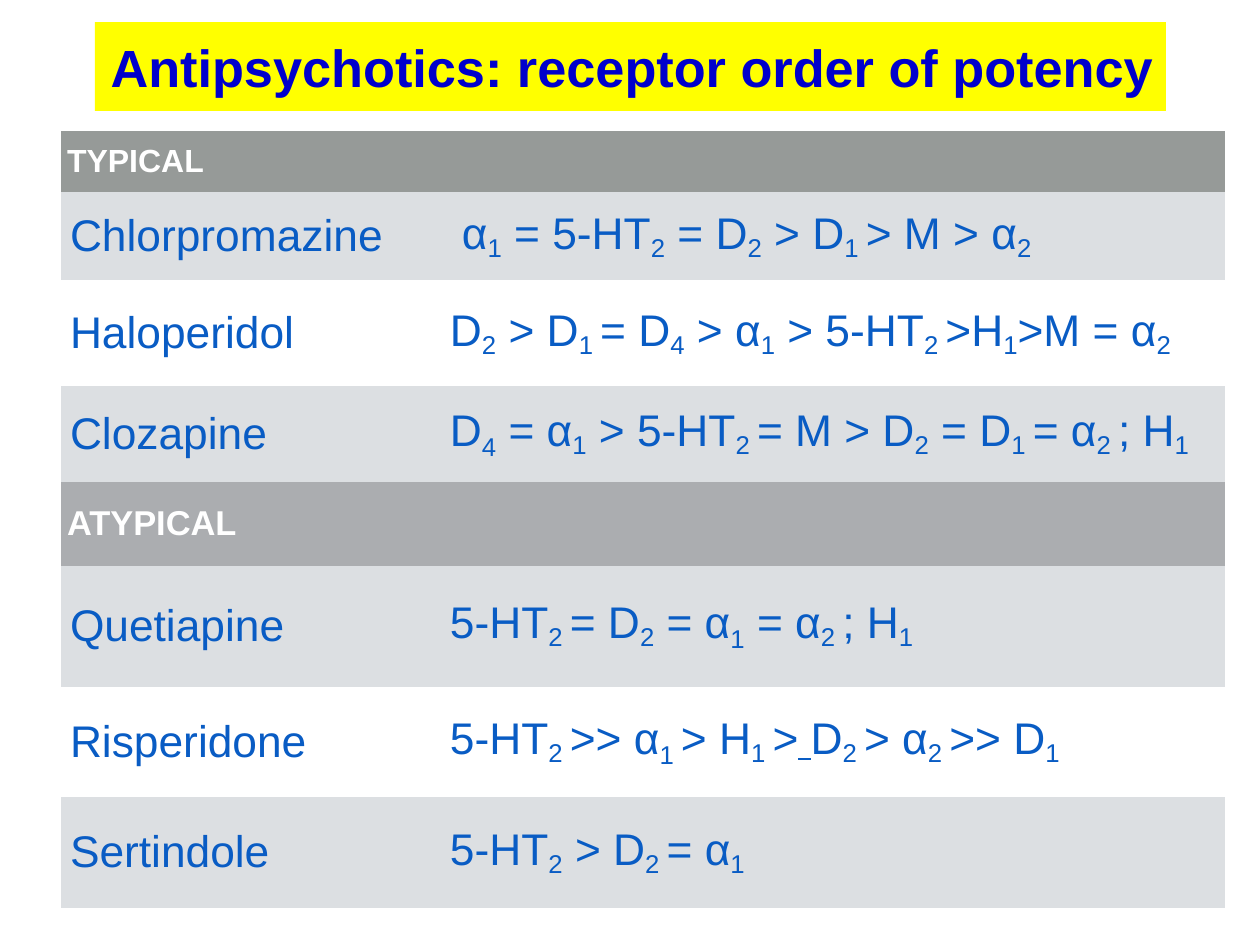
from dataclasses import dataclass

from pptx import Presentation
from pptx.dml.color import RGBColor
from pptx.enum.shapes import MSO_SHAPE as Shape
from pptx.enum.text import MSO_ANCHOR as Anchor, PP_ALIGN as Align
from pptx.oxml.ns import qn
from pptx.slide import Slide
from pptx.table import Table, _Cell as Cell
from pptx.text.text import _Paragraph as Paragraph
from pptx.util import Pt

PX = 10320
PAGE_WIDTH, PAGE_HEIGHT = 1260, 945
FONT = "Arial"
PLAIN_TABLE = "{2D5ABB26-0587-4C30-8999-92F81FD0307C}"
COLUMN_WIDTHS = (380, 784)
TABLE_LEFT, TABLE_TOP = 61, 131
MARGIN = 6

YELLOW = RGBColor(0xFF, 0xFF, 0x00)
NAVY = RGBColor(0x00, 0x00, 0xCC)
WHITE = RGBColor(0xFF, 0xFF, 0xFF)
BLUE = RGBColor(0x09, 0x5C, 0xC4)
DARK_GREY = RGBColor(0x96, 0x9A, 0x98)
MID_GREY = RGBColor(0xAB, 0xAD, 0xB0)
PALE_GREY = RGBColor(0xDC, 0xDF, 0xE2)

SPAN_STYLES = {
    "_": ("baseline", "-18000"),
    "~": ("baseline", "-23000"),
    "^": ("u", "sng"),
}


@dataclass(frozen=True)
class Group:
    name: str
    height: int
    size: float
    fill: RGBColor


@dataclass(frozen=True)
class Drug:
    name: str
    height: int
    fill: RGBColor
    potency: str
    indent: int = -34


ROWS: tuple[Group | Drug, ...] = (
    Group("TYPICAL", 61, 26, DARK_GREY),
    Drug("Chlorpromazine", 88, PALE_GREY,
         "α|_1| = 5-HT|_2| = D|_2| > D|_1 |> M > α|_2", indent=-22),
    Drug("Haloperidol", 106, WHITE,
         "D|_2| > D|_1 |= D|_4| > α|_1| > 5-HT|_2 |>H|_1|>M = α|_2"),
    Drug("Clozapine", 96, PALE_GREY,
         "D|~4| = α|_1| > 5-HT|_2 |= M > D|_2| = D|_1 |= α|_2 |; H|_1"),
    Group("ATYPICAL", 84, 28, MID_GREY),
    Drug("Quetiapine", 121, PALE_GREY,
         "5-HT|_2 |= D|_2| = α|~1| = α|_2 |; H|_1"),
    Drug("Risperidone", 110, WHITE,
         "5-HT|_2 |>> α|~1 |> H|_1 |>|^ |D|_2 |> α|_2 |>> D|_1"),
    Drug("Sertindole", 111, PALE_GREY,
         "5-HT|_2| > D|_2 |= α|_1"),
)


def add_spans(para: Paragraph, text: str, size: float, color: RGBColor,
              bold: bool = False) -> None:
    for part in text.split("|"):
        style = SPAN_STYLES.get(part[0])
        span = para.add_run()
        span.text = part[1:] if style else part
        span.font.name = FONT
        span.font.size = Pt(size)
        span.font.bold = bold
        span.font.color.rgb = color
        if style:
            span.font._element.set(*style)


def set_indent(para: Paragraph, left: int, first: int) -> None:
    properties = para._p.get_or_add_pPr()
    properties.set("marL", str(left * PX))
    properties.set("indent", str(first * PX))


def set_cell(cell: Cell, fill: RGBColor) -> Paragraph:
    cell.fill.solid()
    cell.fill.fore_color.rgb = fill
    cell.vertical_anchor = Anchor.MIDDLE
    cell.margin_left = cell.margin_right = MARGIN * PX
    cell.margin_top = cell.margin_bottom = MARGIN * PX
    return cell.text_frame.paragraphs[0]


def fill_row(table: Table, index: int, row: Group | Drug) -> None:
    table.rows[index].height = row.height * PX
    name, detail = (set_cell(table.cell(index, column), row.fill)
                    for column in range(len(COLUMN_WIDTHS)))
    if isinstance(row, Group):
        add_spans(name, row.name, row.size, WHITE, bold=True)
        return
    set_indent(name, 37, -34)
    add_spans(name, row.name, 36, BLUE)
    set_indent(detail, 37, row.indent)
    add_spans(detail, row.potency, 36, BLUE)


def add_title(page: Slide) -> None:
    box = page.shapes.add_shape(Shape.RECTANGLE, 95 * PX, 22 * PX, 1071 * PX, 89 * PX)
    box.shadow.inherit = False
    box.fill.solid()
    box.fill.fore_color.rgb = YELLOW
    box.line.fill.background()
    frame = box.text_frame
    frame.word_wrap = True
    frame.vertical_anchor = Anchor.MIDDLE
    frame.margin_left = frame.margin_right = 7 * PX
    frame.margin_top = frame.margin_bottom = 7 * PX
    para = frame.paragraphs[0]
    para.alignment = Align.CENTER
    set_indent(para, 3, 0)
    add_spans(para, "Antipsychotics: receptor order of potency", 42.5, NAVY, bold=True)


def add_potency_table(page: Slide) -> None:
    table = page.shapes.add_table(
        len(ROWS), len(COLUMN_WIDTHS), TABLE_LEFT * PX, TABLE_TOP * PX,
        sum(COLUMN_WIDTHS) * PX, sum(row.height for row in ROWS) * PX).table
    table.first_row = table.horz_banding = False
    table._tbl.tblPr.find(qn("a:tableStyleId")).text = PLAIN_TABLE
    for column, width in zip(table.columns, COLUMN_WIDTHS):
        column.width = width * PX
    for index, row in enumerate(ROWS):
        fill_row(table, index, row)


def main() -> None:
    deck = Presentation()
    deck.slide_width = PAGE_WIDTH * PX
    deck.slide_height = PAGE_HEIGHT * PX
    page = deck.slides.add_slide(deck.slide_layouts[6])
    add_title(page)
    add_potency_table(page)
    deck.save("out.pptx")


if __name__ == "__main__":
    main()
